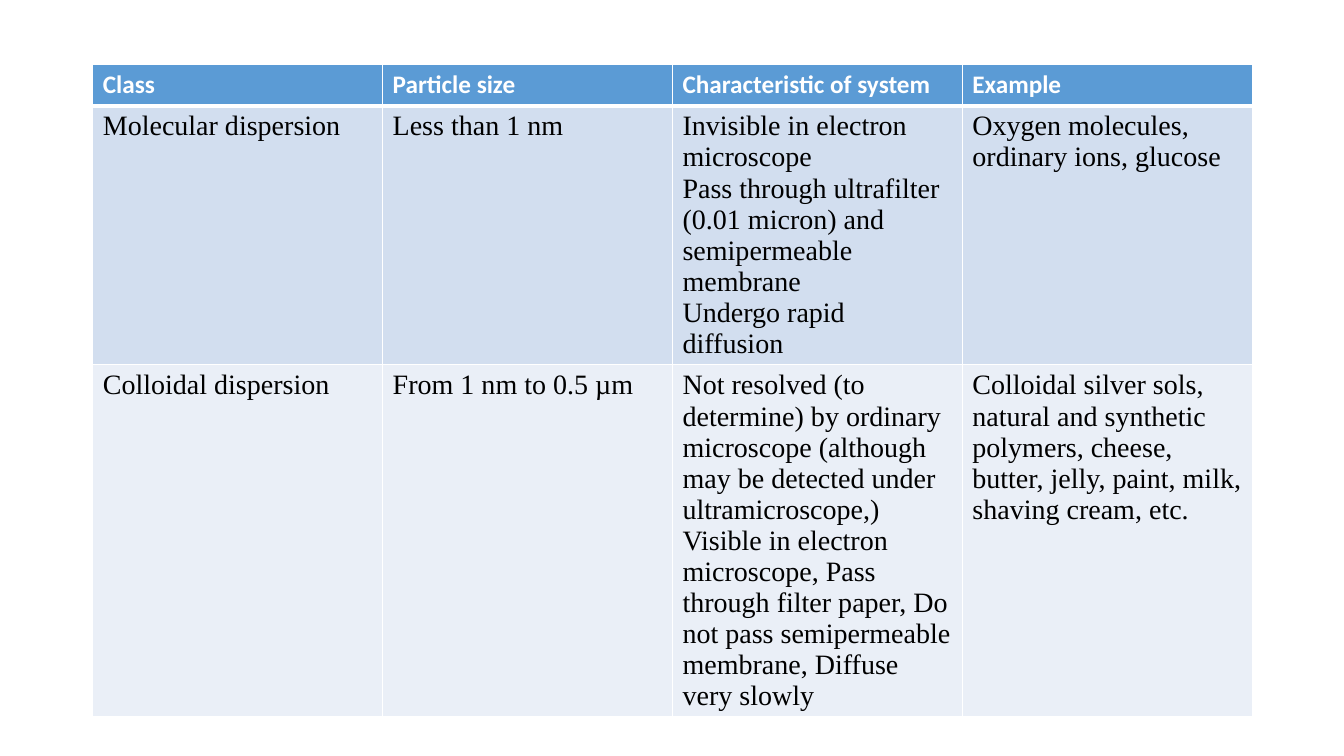
from lxml.etree import SubElement
from pptx import Presentation
from pptx.dml.color import RGBColor
from pptx.oxml.ns import qn
from pptx.util import Inches, Pt

COLORS = {
    "header": "5B9BD5",
    "molecular": "D2DEEF",
    "colloidal": "EAEFF7",
    "white": "FFFFFF",
    "black": "000000",
}

HEADINGS = ["Class", "Particle size", "Characteristic of system", "Example"]
MOLECULAR = [
    "Molecular dispersion",
    "Less than 1 nm",
    "Invisible in electron microscope\n"
    "Pass through ultrafilter (0.01 micron) and semipermeable membrane\n"
    "Undergo rapid diffusion",
    "Oxygen molecules, ordinary ions, glucose",
]
COLLOIDAL = [
    "Colloidal dispersion",
    "From 1 nm to 0.5 µm",
    "Not resolved (to determine) by ordinary microscope (although may be "
    "detected under ultramicroscope,) Visible in electron microscope, Pass "
    "through filter paper, Do not pass semipermeable membrane, Diffuse very slowly",
    "Colloidal silver sols, natural and synthetic polymers, cheese, butter, "
    "jelly, paint, milk, shaving cream, etc.",
]


def rgb(name):
    return RGBColor.from_string(COLORS[name])


def set_borders(cell, top=1, bottom=1):
    """Draw white cell borders; widths are in points."""
    tc_pr = cell._tc.get_or_add_tcPr()
    for side, width in (("L", 1), ("R", 1), ("T", top), ("B", bottom)):
        ln = SubElement(tc_pr, qn(f"a:ln{side}"), w=str(Pt(width)))
        fill = SubElement(ln, qn("a:solidFill"))
        SubElement(fill, qn("a:srgbClr"), val=COLORS["white"])


def fill_row(row, texts, fill, font, size, color, bold=False, top=1, bottom=1):
    for cell, text in zip(row.cells, texts):
        set_borders(cell, top, bottom)
        cell.fill.solid()
        cell.fill.fore_color.rgb = rgb(fill)
        cell.text = text
        for p in cell.text_frame.paragraphs:
            p.font.name = font
            p.font.size = Pt(size)
            p.font.bold = bold
            p.font.color.rgb = rgb(color)


def add_dispersion_table(slide):
    heights = [0.41, 2.57, 3.49]
    frame = slide.shapes.add_table(
        len(heights), len(HEADINGS),
        Inches(0.92), Inches(0.64), Inches(11.5), Inches(sum(heights)))
    table = frame.table
    for row, height in zip(table.rows, heights):
        row.height = Inches(height)

    # Heading row, set off by a thicker rule
    header, molecular, colloidal = table.rows
    fill_row(header, HEADINGS, "header", "Calibri", 18, "white", bold=True, bottom=3)

    # Dispersion classes
    body = {"font": "Times New Roman", "size": 20, "color": "black"}
    fill_row(molecular, MOLECULAR, "molecular", top=3, **body)
    fill_row(colloidal, COLLOIDAL, "colloidal", **body)


def main():
    prs = Presentation()
    prs.slide_width = Inches(13.33)
    prs.slide_height = Inches(7.5)
    slide = prs.slides.add_slide(prs.slide_layouts[6])
    add_dispersion_table(slide)
    prs.save("out.pptx")


if __name__ == "__main__":
    main()
